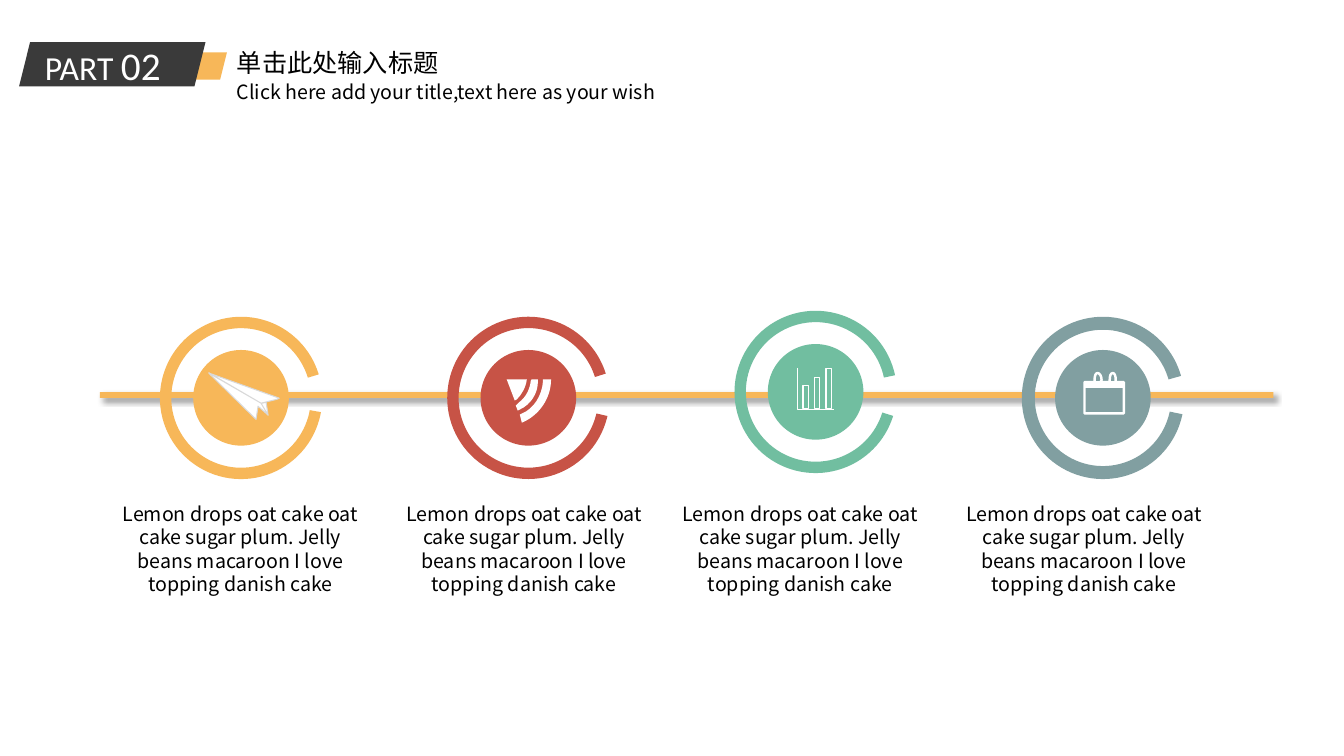
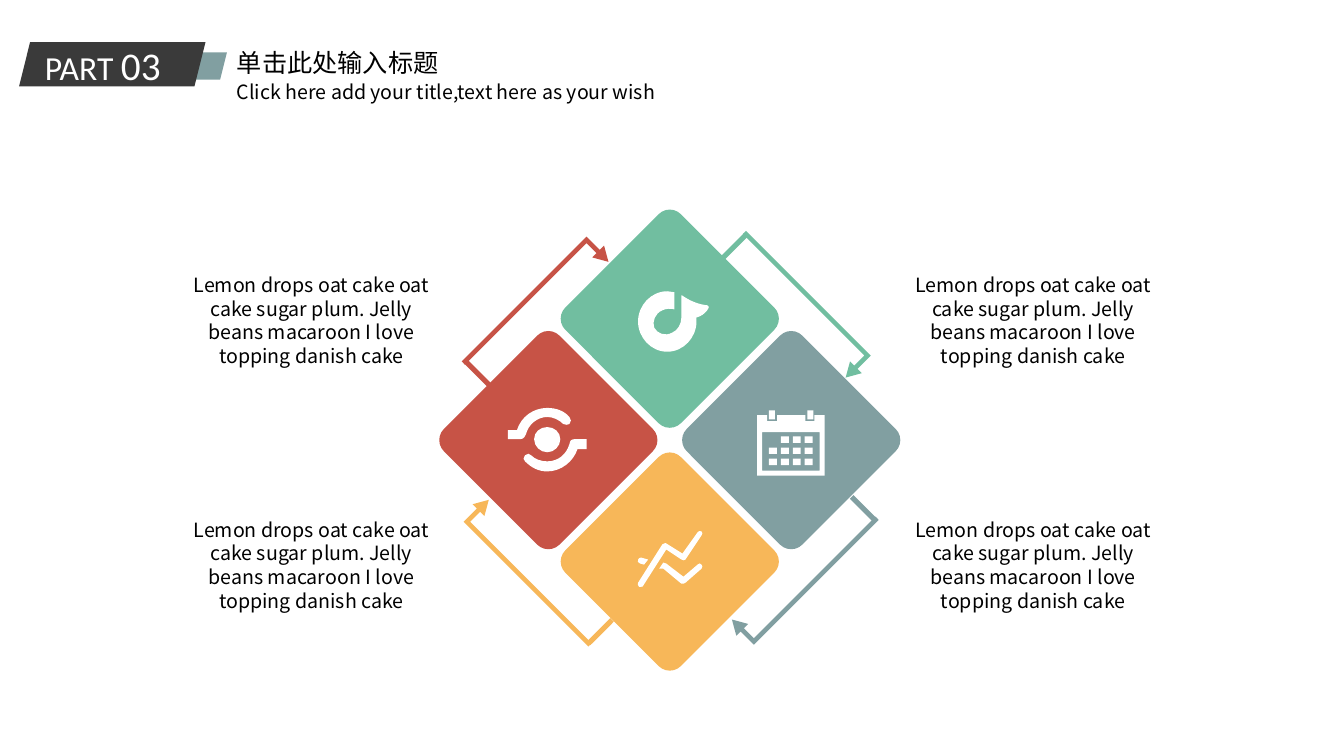
from dataclasses import dataclass

from lxml import etree
from pptx import Presentation
from pptx.dml.color import RGBColor
from pptx.enum.shapes import MSO_SHAPE
from pptx.enum.text import MSO_AUTO_SIZE, PP_ALIGN
from pptx.oxml.ns import qn
from pptx.util import Cm, Pt

RECTANGLE = MSO_SHAPE.RECTANGLE
PROCESS = MSO_SHAPE.FLOWCHART_PROCESS
ROUNDED = MSO_SHAPE.ROUNDED_RECTANGLE
PARALLELOGRAM = MSO_SHAPE.PARALLELOGRAM
OVAL = MSO_SHAPE.OVAL
BLOCK_ARC = MSO_SHAPE.BLOCK_ARC
BENT_ARROW = MSO_SHAPE.BENT_ARROW
FIT_TEXT = MSO_AUTO_SIZE.SHAPE_TO_FIT_TEXT
CENTER = PP_ALIGN.CENTER

COLORS = {
    "orange": "F7B759", "red": "C75346", "green": "71BEA0", "slate": "819FA1",
    "dark": "3A3A3A", "white": "FFFFFF", "black": "000000", "edge": "D9D9D9",
}
BODY_FONT = "Noto Sans CJK SC"
PART_FONT = "Calibri"
TITLE = "单击此处输入标题"
SUBTITLE = "Click here add your title,text here as your wish"
BLURB = ("Lemon drops oat cake oat cake sugar plum. "
         "Jelly beans macaroon I love topping danish cake")

# Icon outlines use 100 grid units per 2.54 cm
GRID = Cm(2.54) / 100


@dataclass
class Icon:
    """Contours: a start point, then points (x, y) or cubic curves of six numbers."""
    left: float
    top: float
    contours: list
    fill: str | None = "white"
    line: str | None = None
    line_width: float = 1
    closed: bool = True


@dataclass
class Step:
    color: str
    ring_top: float
    rotation: float
    arc_start: float
    arc_end: float
    thickness: float
    text_left: float
    icon: Icon


@dataclass
class Quarter:
    color: str
    column: int
    row: int
    arrow_left: float
    arrow_top: float
    tail_left: float
    tail_top: float
    rotation: float
    icon: Icon


PLANE = Icon(5.26, 9.4, [
    [(0, 0), (70, 25), (68, 26), (52, 30), (0, 0), (4, 2), (52, 30), (59, 42),
     (52, 30), (53, 30), (57, 29), (59, 42), (57, 40), (49, 33), (47, 46),
     (1, 1), (1, 0)],
], line="edge", line_width=0)
FAN = Icon(12.77, 9.56, [
    [(0, 0), (20, 0), (19, 8, 15, 15, 10, 20), (8, 21)],
    [(36, 0), (44, 0), (44, 19, 32, 36, 15, 43), (13, 35), (15, 34),
     (27, 29, 35, 16, 36, 2)],
    [(25, 0), (31, 0), (31, 2), (31, 14, 24, 25, 13, 30), (11, 31), (9, 26),
     (12, 23), (19, 18, 23, 10, 24, 1)],
])
AXES = Icon(20.11, 9.27, [[(0, 0), (0, 41), (36, 41)]],
            fill=None, line="white", line_width=0.75, closed=False)
RINGED_PAD = Icon(27.33, 9.4, [
    [(13, 0), (15, 0, 17, 3, 17, 7), (16, 9), (25, 9), (25, 7),
     (25, 3, 26, 0, 28, 0), (30, 0, 31, 3, 31, 7), (31, 9), (39, 9), (39, 40),
     (0, 40), (0, 9), (10, 9), (10, 7), (10, 3, 11, 0, 13, 0)],
], fill=None, line="white", line_width=1.75)
CALENDAR = Icon(19.08, 10.46, [
    [(67, 0), (57, 0), (57, 6), (48, 6), (48, 0), (20, 0), (20, 6), (10, 6),
     (10, 0), (0, 0), (0, 60), (67, 60)],
    [(62, 55), (5, 55), (5, 17), (62, 17)],
])
TREND = Icon(16.08, 13.39, [
    [(28, 18), (43, 28), (45, 29, 46, 29, 47, 28), (63, 4), (64, 3, 64, 1, 63, 0),
     (61, -1, 60, 0, 59, 1), (44, 22), (28, 12), (28, 12, 27, 11, 26, 12),
     (25, 12, 25, 12, 24, 13), (0, 51), (-1, 52, 0, 54, 1, 55),
     (2, 55, 2, 55, 3, 55), (4, 55, 5, 55, 5, 54)],
    [(59, 33), (45, 45), (28, 32), (25, 31), (21, 37), (25, 37), (43, 52),
     (44, 52, 44, 52, 45, 52), (46, 52, 46, 52, 47, 51), (63, 37),
     (64, 36, 64, 34, 63, 33), (62, 32, 60, 31, 59, 33)],
    [(2, 32), (6, 33), (10, 28), (3, 26), (2, 26, 0, 27, 0, 28),
     (-1, 30, 0, 31, 2, 32)],
])
ORBIT = Icon(12.8, 10.28, [
    [(66, 31), (62, 31, 61, 34, 61, 36), (58, 46, 50, 53, 39, 53),
     (33, 53, 27, 51, 23, 47), (22, 45, 19, 45, 17, 47), (15, 49, 15, 52, 17, 53),
     (23, 59, 30, 63, 39, 63), (53, 63, 65, 53, 69, 41), (78, 41), (78, 31)],
    [(18, 26), (20, 17, 29, 9, 39, 9), (45, 9, 51, 12, 55, 16),
     (57, 17, 60, 17, 61, 16), (63, 14, 63, 11, 61, 9), (56, 3, 48, 0, 39, 0),
     (25, 0, 13, 9, 9, 22), (0, 22), (0, 31), (12, 31), (16, 31, 17, 28, 18, 26)],
    [(26, 31), (26, 38, 32, 44, 39, 44), (46, 44, 52, 38, 52, 31),
     (52, 24, 46, 19, 39, 19), (32, 19, 26, 24, 26, 31)],
])
NOTE = Icon(16.08, 7.34, [
    [(58, 26), (67, 24, 73, 14, 69, 14), (59, 13, 51, 9, 45, 5),
     (45, 5, 44, 4, 43, 4), (43, 26), (43, 33, 39, 39, 34, 41),
     (27, 45, 19, 42, 16, 36), (14, 30, 17, 22, 24, 19), (28, 17, 33, 17, 36, 18),
     (36, 1), (34, 1, 31, 0, 29, 0), (13, 0, 0, 14, 0, 30), (0, 46, 13, 60, 29, 60),
     (45, 60, 58, 46, 58, 30), (58, 29, 58, 27, 58, 26)],
])

STEPS = [
    Step("orange", 7.98, 225.7, 86.63, 70.46, 0.07, 2.95, PLANE),
    Step("red", 7.98, 224.9, 88.81, 70.61, 0.07, 10.1, FAN),
    Step("green", 7.83, 224.7, 91.49, 74.06, 0.07, 17.06, AXES),
    Step("slate", 7.98, 222.2, 89.65, 73.24, 0.08, 24.21, RINGED_PAD),
]
QUARTERS = [
    Quarter("red", -1, 0, 13.14, 5.48, 11.61, 9.34, 45, ORBIT),
    Quarter("orange", 0, 1, 13.08, 12.07, 14.71, 15.85, 315, TREND),
    Quarter("green", 0, -1, 19.71, 5.44, 18.08, 6.15, 135, NOTE),
    Quarter("slate", 1, 0, 19.8, 12.13, 21.34, 12.75, 225, CALENDAR),
]


def rgb(name: str) -> RGBColor:
    return RGBColor.from_string(COLORS[name])


def paint(shape, fill: str | None, line: str | None = None, width: float = 1) -> None:
    shape.shadow.inherit = False
    if fill:
        shape.fill.solid()
        shape.fill.fore_color.rgb = rgb(fill)
    else:
        shape.fill.background()
    if line:
        shape.line.color.rgb = rgb(line)
        shape.line.width = Pt(width)
    else:
        shape.line.fill.background()


def add_preset(page, kind, left: float, top: float, width: float, height: float,
               fill: str | None, line: str | None = None, rotation: float = 0,
               adjust: tuple = ()):
    shape = page.shapes.add_shape(kind, Cm(left), Cm(top), Cm(width), Cm(height))
    shape.rotation = rotation
    for index, value in enumerate(adjust):
        shape.adjustments[index] = value
    paint(shape, fill, line)
    return shape


def bend_curves(shape, contours: list) -> None:
    """Join the three straight pieces that stand for each cubic curve."""
    pieces = iter(list(shape._element.iter(qn("a:lnTo"))))
    for segment in (part for contour in contours for part in contour[1:]):
        piece = next(pieces)
        if len(segment) == 6:
            piece.tag = qn("a:cubicBezTo")
            for follower in (next(pieces), next(pieces)):
                piece.append(follower[0])
                follower.getparent().remove(follower)


def add_icon(page, icon: Icon) -> None:
    builder = page.shapes.build_freeform(*icon.contours[0][0], scale=GRID)
    for index, (start, *segments) in enumerate(icon.contours):
        if index:
            builder.move_to(*start)
        points = [part[at:at + 2] for part in segments for at in range(0, len(part), 2)]
        builder.add_line_segments(points, close=icon.closed)
    shape = builder.convert_to_shape(Cm(icon.left), Cm(icon.top))
    bend_curves(shape, icon.contours)
    paint(shape, icon.fill, icon.line, icon.line_width)


def add_box(page, left: float, top: float, width: float, height: float):
    box = page.shapes.add_textbox(Cm(left), Cm(top), Cm(width), Cm(height))
    box.text_frame.word_wrap = True
    return box.text_frame


def style_body(para, text: str, size: float) -> None:
    para.text = text
    para.font.size = Pt(size)
    para.font.name = BODY_FONT
    para.font.color.rgb = rgb("black")
    para.line_spacing = Pt(1.2 * size)
    defaults = para._p.pPr.find(qn("a:defRPr"))
    etree.SubElement(defaults, qn("a:ea")).set("typeface", BODY_FONT)


def add_blurb(page, left: float, top: float) -> None:
    frame = add_box(page, left, top, 6.22, 2.87)
    frame.margin_left = frame.margin_right = Cm(0)
    frame.margin_top = frame.margin_bottom = Cm(0)
    para = frame.paragraphs[0]
    style_body(para, BLURB, 14)
    para.alignment = CENTER
    para.space_before = Pt(7.5)


def add_header(page, number: str, accent: str) -> None:
    add_preset(page, PARALLELOGRAM, 4.35, 1.32, 1.37, 0.69, accent)
    add_preset(page, PARALLELOGRAM, 0.48, 1.06, 4.7, 1.12, "dark")
    for text, size, top, width, height in ((SUBTITLE, 14, 1.88, 12.75, 0.86),
                                           (TITLE, 18, 1.07, 8.05, 1.02)):
        frame = add_box(page, 5.72, top, width, height)
        frame.auto_size = FIT_TEXT
        style_body(frame.paragraphs[0], text, size)
    frame = add_box(page, 0.88, 0.91, 3.91, 1.45)
    frame.auto_size = FIT_TEXT
    para = frame.paragraphs[0]
    para.font.name = PART_FONT
    para.font.color.rgb = rgb("white")
    for text, size in (("PART ", 24), (number, 28)):
        span = para.add_run()
        span.text = text
        span.font.size = Pt(size)


def add_soft_shadow(shape) -> None:
    effects = shape._element.spPr.find(qn("a:effectLst"))
    shadow = etree.SubElement(effects, qn("a:outerShdw"), blurRad=str(Pt(4)),
                              dist=str(Pt(3)), dir="2700000", algn="tl", rotWithShape="0")
    color = etree.SubElement(shadow, qn("a:srgbClr"), val=COLORS["black"])
    etree.SubElement(color, qn("a:alpha"), val="40000")


def draw_timeline(page) -> None:
    add_header(page, "02", "orange")
    add_soft_shadow(add_preset(page, RECTANGLE, 2.52, 9.88, 29.57, 0.15, "orange"))
    for index, step in enumerate(STEPS):
        left = 4.03 + 7.24 * index
        add_preset(page, BLOCK_ARC, left, step.ring_top, 4.09, 4.09, step.color,
                   rotation=step.rotation,
                   adjust=(step.arc_start, step.arc_end, step.thickness))
        add_preset(page, OVAL, left + 0.84, step.ring_top + 0.84, 2.41, 2.41, step.color)
        add_icon(page, step.icon)
        add_blurb(page, step.text_left, 12.64)
    # Bars of the chart icon and band of the pad icon
    for index, height in enumerate((0.58, 0.79, 1.02)):
        add_preset(page, PROCESS, 20.24 + 0.29 * index, 10.3 - height, 0.13, height,
                   None, "white")
    add_preset(page, RECTANGLE, 27.34, 9.61, 0.97, 0.15, "white", "white")


def draw_cycle(page) -> None:
    add_header(page, "03", "slate")
    tile, pitch = 4.12, 3.06
    for part in QUARTERS:
        add_preset(page, BENT_ARROW, part.arrow_left, part.arrow_top, 0.84, 4.6, part.color,
                   rotation=part.rotation, adjust=(0.137, 0.25, 0.436, 0))
        add_preset(page, RECTANGLE, part.tail_left, part.tail_top, 0.84, 0.13, part.color,
                   rotation=part.rotation)
        add_preset(page, ROUNDED, 16.88 + pitch * part.column - tile / 2,
                   11.09 + pitch * part.row - tile / 2, tile, tile, part.color,
                   rotation=315, adjust=(0.096,))
        add_icon(page, part.icon)
    # Days and binder tabs of the calendar icon
    for row in range(3):
        for column in range(4):
            if row or column:
                add_preset(page, RECTANGLE, 19.38 + 0.3 * column, 11 + 0.28 * row,
                           0.2, 0.16, "white")
    for left in (19.38, 20.35):
        add_preset(page, RECTANGLE, left, 10.34, 0.15, 0.23, "white")
    for left in (4.74, 22.93):
        for top in (6.88, 13.05):
            add_blurb(page, left, top)


def main() -> None:
    deck = Presentation()
    deck.slide_width, deck.slide_height = Cm(33.87), Cm(19.05)
    for draw in (draw_timeline, draw_cycle):
        draw(deck.slides.add_slide(deck.slide_layouts[6]))
    deck.save("out.pptx")


if __name__ == "__main__":
    main()
